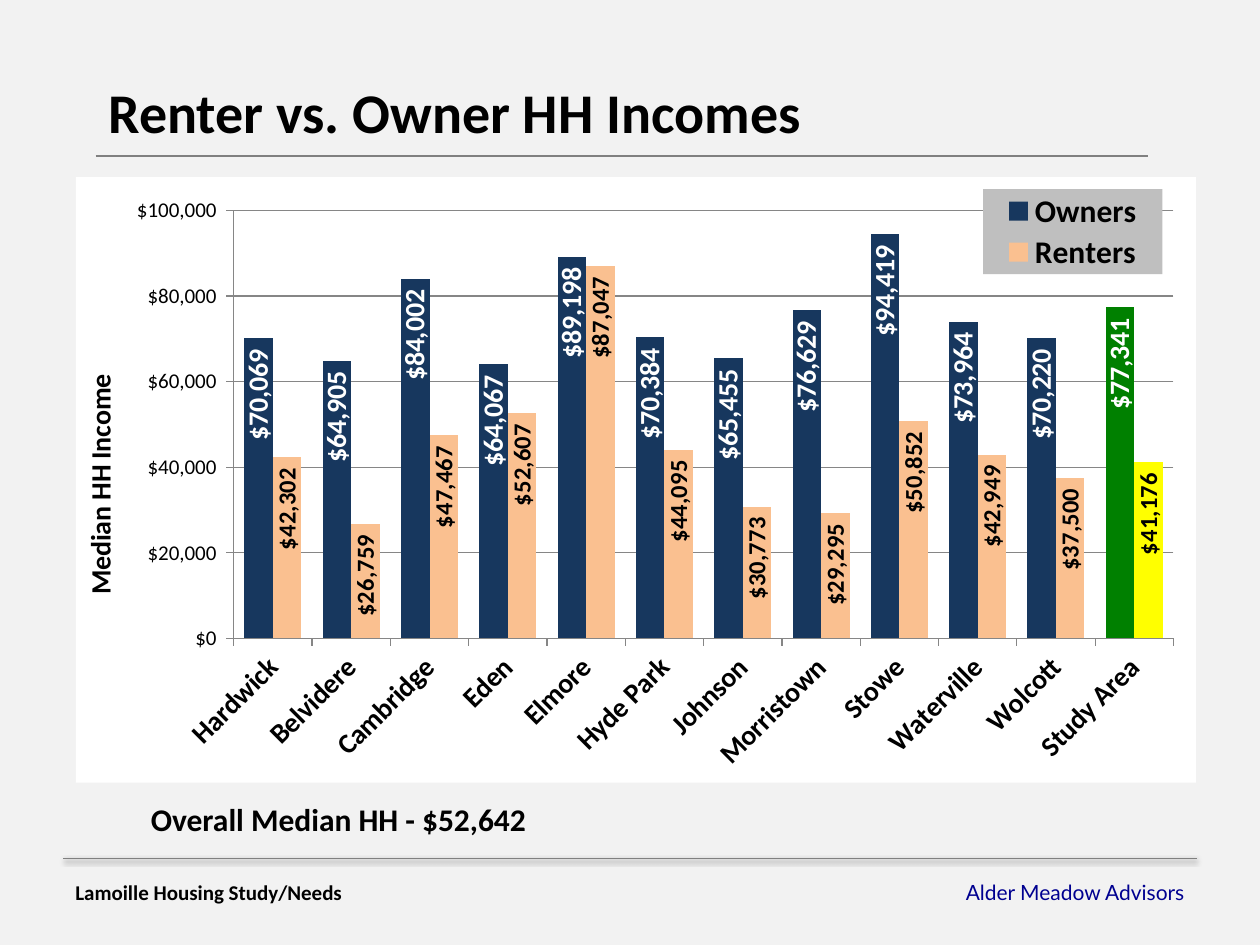
from dataclasses import dataclass
from typing import NamedTuple

from lxml.etree import SubElement
from pptx import Presentation
from pptx.chart.data import CategoryChartData
from pptx.dml.color import RGBColor
from pptx.enum.chart import XL_CHART_TYPE as ChartType
from pptx.enum.chart import XL_LABEL_POSITION as LabelPos
from pptx.enum.chart import XL_LEGEND_POSITION as LegendPos
from pptx.enum.chart import XL_TICK_MARK as TickMark
from pptx.enum.shapes import MSO_CONNECTOR as Connector
from pptx.enum.shapes import MSO_SHAPE as Preset
from pptx.enum.text import MSO_ANCHOR as Anchor
from pptx.enum.text import PP_ALIGN as Align
from pptx.oxml import parse_xml
from pptx.oxml.ns import nsdecls, qn
from pptx.util import Cm, Pt


@dataclass(frozen=True)
class Theme:
    font: str = "Calibri"
    firm_font: str = "Lato"
    ink: str = "000000"
    paper: str = "FFFFFF"
    backdrop: str = "F2F2F2"
    rule: str = "808080"
    axis: str = "868686"
    legend: str = "BFBFBF"
    firm: str = "000090"
    title_size: int = 32
    note_size: int = 18
    axis_size: int = 16
    small_size: int = 12


class Box(NamedTuple):
    left: float
    top: float
    width: float
    height: float

    def lengths(self) -> list:
        return [Cm(value) for value in self]


@dataclass(frozen=True)
class IncomeSeries:
    name: str
    incomes: tuple
    color: str
    area_color: str  # the last column, the whole study area
    label_color: str
    label_size: int


@dataclass(frozen=True)
class Rule:
    left: float
    right: float
    y: float
    weight: float
    shadow: bool = False


THEME = Theme()
DOLLARS = '"$"#,##0_);\\("$"#,##0\\)'
TOWNS = ("Hardwick", "Belvidere", "Cambridge", "Eden", "Elmore", "Hyde Park",
         "Johnson", "Morristown", "Stowe", "Waterville", "Wolcott", "Study Area")
HOUSEHOLDS = (
    IncomeSeries("Owners", (70069, 64905, 84002, 64067, 89198, 70384, 65455,
                            76629, 94419, 73964, 70220, 77341),
                 "17375E", "008000", THEME.paper, 16),
    IncomeSeries("Renters", (42302, 26759, 47467, 52607, 87047, 44095, 30773,
                             29295, 50852, 42949, 37500, 41176),
                 "FAC090", "FFFF00", THEME.ink, 14),
)
RULES = (Rule(1.27, 24.13, 17.3, 0.5, shadow=True), Rule(1.93, 23.14, 3.15, 1))


def rgb(color: str) -> RGBColor:
    return RGBColor.from_string(color)


def paint(fill, color: str) -> None:
    fill.solid()
    fill.fore_color.rgb = rgb(color)


def style_font(font, size: float, color: str = THEME.ink, bold: bool = True,
               name: str = THEME.font) -> None:
    font.size, font.bold, font.name = Pt(size), bold, name
    font.color.rgb = rgb(color)


def write(frame, text: str, *, align=Align.LEFT, anchor=Anchor.TOP, **font) -> None:
    frame.word_wrap = True
    frame.vertical_anchor = anchor
    paragraph = frame.paragraphs[0]
    paragraph.alignment = align
    run = paragraph.add_run()
    run.text = text
    style_font(run.font, **font)


def add_text(slide, box: Box, text: str, **style) -> None:
    write(slide.shapes.add_textbox(*box.lengths()).text_frame, text, **style)


def add_rule(slide, rule: Rule) -> None:
    line = slide.shapes.add_connector(Connector.STRAIGHT, Cm(rule.left), Cm(rule.y),
                                      Cm(rule.right), Cm(rule.y))
    line.line.color.rgb = rgb(THEME.rule)
    line.line.width = Pt(rule.weight)
    effects = SubElement(line._element.spPr, qn("a:effectLst"))
    if rule.shadow:
        effects.append(parse_xml(
            f'<a:outerShdw {nsdecls("a")} blurRad="40000" dist="20000" dir="5400000">'
            f'<a:srgbClr val="{THEME.ink}"><a:alpha val="38000"/></a:srgbClr>'
            "</a:outerShdw>"))


def add_backdrop(slide, box: Box) -> None:
    backdrop = slide.shapes.add_shape(Preset.RECTANGLE, *box.lengths())
    backdrop.shadow.inherit = False
    paint(backdrop.fill, THEME.backdrop)
    backdrop.line.color.rgb = rgb(THEME.backdrop)
    slide.shapes._spTree.insert(2, backdrop._element)  # behind the title


def manual_layout(box: Box, inner: bool = False):
    """Place a chart part by fractions of the chart's size."""
    target = '<c:layoutTarget val="inner"/>' if inner else ""
    modes = '<c:xMode val="edge"/><c:yMode val="edge"/>'
    sizes = "".join(f'<c:{tag} val="{value}"/>' for tag, value in zip("xywh", box))
    return parse_xml(f'<c:layout {nsdecls("c")}><c:manualLayout>{target}{modes}{sizes}'
                     "</c:manualLayout></c:layout>")


def rotate(text_properties, degrees: int) -> None:
    body = text_properties.find(qn("a:bodyPr"))
    body.set("rot", str(degrees * 60000))
    body.set("vert", "horz")


def format_axes(chart) -> None:
    towns, incomes = chart.category_axis, chart.value_axis
    for axis, size, bold in ((towns, THEME.axis_size, True),
                             (incomes, THEME.small_size, False)):
        style_font(axis.tick_labels.font, size, bold=bold)
        axis.major_tick_mark, axis.minor_tick_mark = TickMark.OUTSIDE, TickMark.NONE
        axis.format.line.color.rgb = rgb(THEME.axis)
    rotate(towns._element.find(qn("c:txPr")), -45)
    incomes.minimum_scale, incomes.maximum_scale = 0, 100000
    incomes.major_unit = 20000
    incomes.major_gridlines.format.line.color.rgb = rgb(THEME.axis)
    incomes.tick_labels.number_format = DOLLARS
    incomes.tick_labels.number_format_is_linked = False
    caption = incomes.axis_title.text_frame
    write(caption, "Median HH Income", align=Align.CENTER, size=THEME.axis_size)
    rotate(caption._txBody, -90)


def format_series(series, group: IncomeSeries) -> None:
    paint(series.format.fill, group.color)
    paint(series.points[len(TOWNS) - 1].format.fill, group.area_color)
    labels = series.data_labels
    labels.show_value = True
    labels.position = LabelPos.INSIDE_END
    labels.number_format, labels.number_format_is_linked = DOLLARS, False
    style_font(labels.font, group.label_size, group.label_color)
    rotate(labels._element.find(qn("c:txPr")), -90)


def format_legend(chart, box: Box) -> None:
    chart.has_legend = True
    legend = chart.legend
    legend.position = LegendPos.RIGHT
    legend.include_in_layout = True
    style_font(legend.font, THEME.note_size)
    element = legend._element
    for old in element.findall(qn("c:layout")):
        element.remove(old)
    element.find(qn("c:legendPos")).addnext(manual_layout(box))
    element.find(qn("c:txPr")).addprevious(solid_area(THEME.legend))


def solid_area(color: str):
    return parse_xml(f'<c:spPr {nsdecls("c", "a")}><a:solidFill><a:srgbClr val="{color}"/>'
                     "</a:solidFill><a:ln><a:noFill/></a:ln></c:spPr>")


def add_income_chart(slide, box: Box) -> None:
    data = CategoryChartData(number_format=DOLLARS)
    data.categories = TOWNS
    for group in HOUSEHOLDS:
        data.add_series(group.name, group.incomes)
    chart = slide.shapes.add_chart(ChartType.COLUMN_CLUSTERED, *box.lengths(), data).chart
    chart.has_title = False
    style_font(chart.font, 10, bold=False)
    plot = chart.plots[0]
    plot.gap_width, plot.overlap, plot.vary_by_categories = 75, 0, False
    for series, group in zip(plot.series, HOUSEHOLDS):
        format_series(series, group)
    format_axes(chart)
    format_legend(chart, Box(0.81, 0.02, 0.16, 0.14))
    # Plot position and white chart area
    area = chart._chartSpace.chart.plotArea
    for old in area.findall(qn("c:layout")):
        area.remove(old)
    area.insert(0, manual_layout(Box(0.141, 0.055, 0.839, 0.707), inner=True))
    chart._chartSpace.chart.addnext(solid_area(THEME.paper))


def main() -> None:
    deck = Presentation()
    deck.slide_width, deck.slide_height = Cm(25.4), Cm(19.05)
    slide = deck.slides.add_slide(deck.slide_layouts[5])
    add_backdrop(slide, Box(0, 0, 25.4, 19.05))
    # Title
    title = slide.shapes.title
    title.left, title.top, title.width, title.height = Box(1.93, 1.42, 20.22, 1.63).lengths()
    write(title.text_frame, "Renter vs. Owner HH Incomes", anchor=Anchor.MIDDLE,
          size=THEME.title_size)
    for rule in RULES:
        add_rule(slide, rule)
    # Chart and its note
    add_income_chart(slide, Box(1.53, 3.57, 22.58, 12.21))
    add_text(slide, Box(2.79, 16, 8.41, 1.02), "Overall Median HH - $52,642",
             size=THEME.note_size)
    # Footer
    add_text(slide, Box(1.27, 17.6, 7.52, 0.76), "Lamoille Housing Study/Needs",
             size=THEME.small_size)
    add_text(slide, Box(16.61, 17.6, 7.52, 0.76), "Alder Meadow Advisors",
             align=Align.RIGHT, size=THEME.small_size, color=THEME.firm, bold=False,
             name=THEME.firm_font)
    deck.save("out.pptx")


if __name__ == "__main__":
    main()
